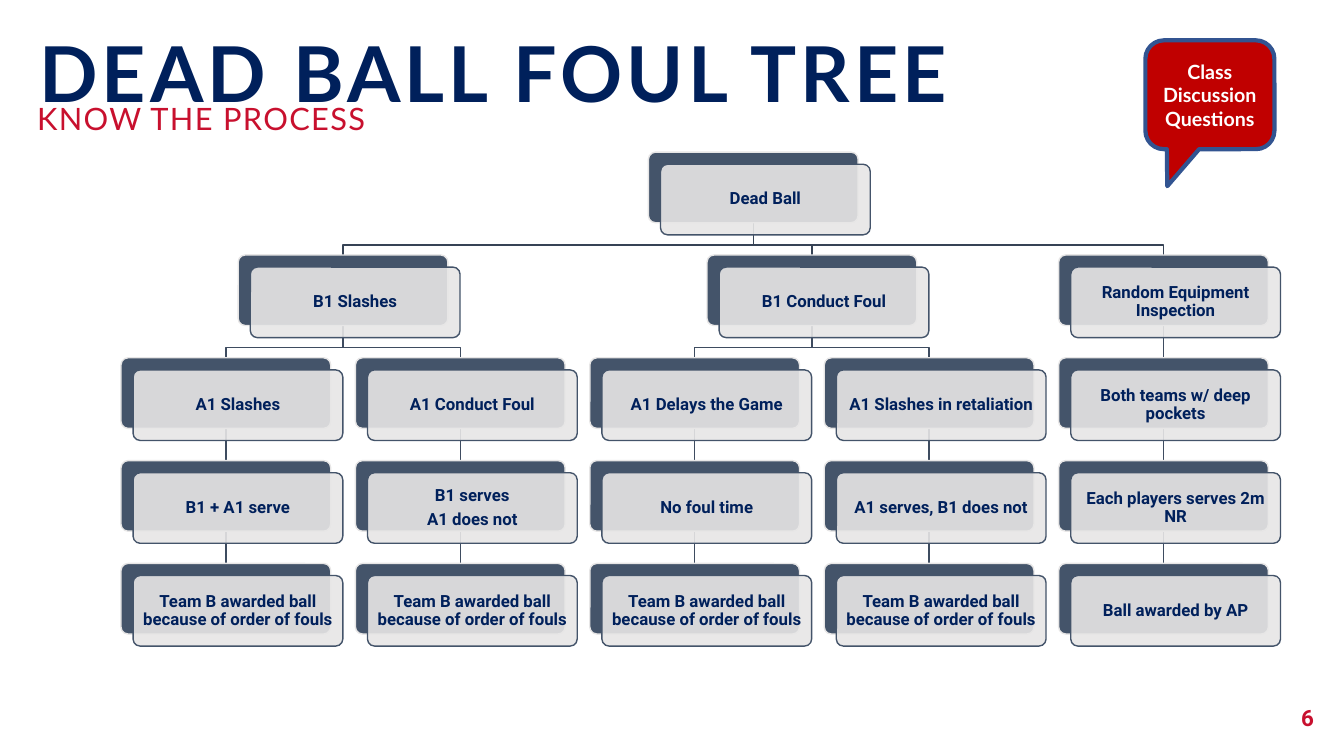
from itertools import count
from lxml.etree import SubElement
from pptx import Presentation
from pptx.dml.color import RGBColor
from pptx.enum.shapes import MSO_CONNECTOR, MSO_SHAPE
from pptx.enum.text import MSO_ANCHOR, PP_ALIGN
from pptx.oxml.ns import qn
from pptx.util import Inches, Pt

TITLE = "DEAD BALL FOUL TREE"
SUBTITLE = "KNOW THE PROCESS"
PAGE_NUMBER = "6"
DISCUSSION = "Class Discussion Questions"
AWARD = {"Team B awarded ball because of order of fouls": {}}
FOUL_TREE = {
    "Dead Ball": {
        "B1 Slashes": {
            "A1 Slashes": {"B1 + A1 serve": AWARD},
            "A1 Conduct Foul": {"B1 serves\nA1 does not": AWARD},
        },
        "B1 Conduct Foul": {
            "A1 Delays the Game": {"No foul time": AWARD},
            "A1 Slashes in retaliation": {"A1 serves, B1 does not": AWARD},
        },
        "Random Equipment Inspection": {
            "Both teams w/ deep pockets": {
                "Each players serves 2m NR": {"Ball awarded by AP": {}},
            },
        },
    },
}

THEME = {
    "navy": "00205B", "red": "C8102E", "white": "FFFFFF",
    "slate": "44546A", "mist": "E7E6E6",
    "root_branch": "364355", "branch": "3E4C60",
    "callout": "C00000", "callout_edge": "325491",
    "heading_font": "Lato", "body_font": "Roboto",
    "title": 55, "subtitle": 22, "page": 16, "discussion": 14, "card": 12,
}
TREE_LEFT, TREE_TOP = 1.2, 1.51
COLUMN_STEP, ROW_STEP = 2.325, 1.02
CARD_W, CARD_H, CARD_OFFSET = 2.08, 0.7, 0.12
ELBOW_DROP = 0.22


def color(name):
    return RGBColor.from_string(THEME[name])


def write(shape, text, font, size, ink, bold=True, align=PP_ALIGN.LEFT,
          tracking=0, line_spacing=None, space_after=None):
    frame = shape.text_frame
    frame.word_wrap = True
    for index, line in enumerate(text.split("\n")):
        paragraph = frame.add_paragraph() if index else frame.paragraphs[0]
        paragraph.alignment = align
        paragraph.line_spacing = line_spacing
        paragraph.space_after = space_after
        run = paragraph.add_run()
        run.text = line
        run.font.name = THEME[font]
        run.font.size = Pt(THEME[size])
        run.font.bold = bold
        run.font.color.rgb = color(ink)
        if tracking:
            run.font._element.set("spc", str(tracking * 100))


def add_label(slide, box, text, *style, **options):
    label = slide.shapes.add_textbox(*map(Inches, box))
    write(label, text, *style, **options)


def add_panel(slide, preset, box, fill, edge, width, adjustments):
    panel = slide.shapes.add_shape(preset, *map(Inches, box))
    panel.shadow.inherit = False
    panel.fill.solid()
    panel.fill.fore_color.rgb = color(fill)
    panel.line.color.rgb = color(edge)
    panel.line.width = Pt(width)
    for index, value in enumerate(adjustments):
        panel.adjustments[index] = value
    return panel


def place(tree, columns, cards, branches, row=0):
    lefts = []
    top = TREE_TOP + row * ROW_STEP
    for label, children in tree.items():
        child_lefts = place(children, columns, cards, branches, row + 1)
        if child_lefts:
            left = (child_lefts[0] + child_lefts[-1]) / 2
        else:
            left = TREE_LEFT + next(columns) * COLUMN_STEP
        cards.append((label, left, top))
        branches.extend((left, child, top, row) for child in child_lefts)
        lefts.append(left)
    return lefts


def add_branch(slide, parent_left, child_left, parent_top, row):
    start_x, end_x = (Inches(left + CARD_W / 2) for left in (parent_left, child_left))
    start_y = Inches(parent_top + CARD_H)
    elbow_y = Inches(parent_top + CARD_H + ELBOW_DROP)
    end_y = Inches(parent_top + ROW_STEP)
    if start_x == end_x:
        branch = slide.shapes.add_connector(
            MSO_CONNECTOR.STRAIGHT, start_x, start_y, end_x, end_y)
        SubElement(branch._element.spPr, qn("a:effectLst"))
    else:
        builder = slide.shapes.build_freeform(start_x, start_y)
        builder.add_line_segments(
            [(start_x, elbow_y), (end_x, elbow_y), (end_x, end_y)], close=False)
        branch = builder.convert_to_shape()
        branch.shadow.inherit = False
        branch.fill.background()
    branch.line.color.rgb = color("branch" if row else "root_branch")
    branch.line.width = Pt(1)


def add_card(slide, label, left, top):
    add_panel(slide, MSO_SHAPE.ROUNDED_RECTANGLE, (left, top, CARD_W, CARD_H),
              "slate", "mist", 1, [0.1])
    front = add_panel(
        slide, MSO_SHAPE.ROUNDED_RECTANGLE,
        (left + CARD_OFFSET, top + CARD_OFFSET, CARD_W, CARD_H),
        "mist", "slate", 1, [0.1])
    tint = front.fill._xPr.find(qn("a:solidFill"))[0]
    SubElement(tint, qn("a:alpha"), val="90000")
    frame = front.text_frame
    frame.vertical_anchor = MSO_ANCHOR.MIDDLE
    frame.margin_left = frame.margin_right = Inches(0.07)
    frame.margin_top = frame.margin_bottom = Inches(0.07)
    write(front, label, "body_font", "card", "navy", align=PP_ALIGN.CENTER,
          line_spacing=0.9, space_after=Pt(4.2))


def main():
    deck = Presentation()
    deck.slide_width, deck.slide_height = Inches(13.33), Inches(7.5)
    slide = deck.slides.add_slide(deck.slide_layouts[6])

    cards, branches = [], []
    place(FOUL_TREE, count(), cards, branches)
    for branch in branches:
        add_branch(slide, *branch)
    for card in cards:
        add_card(slide, *card)

    add_label(slide, (0.29, 0.31, 11.5, 0.97), TITLE,
              "heading_font", "title", "navy", tracking=3, line_spacing=0.9)
    add_label(slide, (0.27, 0.94, 11.93, 0.47), SUBTITLE,
              "heading_font", "subtitle", "red", bold=False, tracking=1)
    add_label(slide, (10.13, 6.94, 3, 0.4), PAGE_NUMBER,
              "body_font", "page", "red", align=PP_ALIGN.RIGHT)
    discussion = add_panel(
        slide, MSO_SHAPE.ROUNDED_RECTANGULAR_CALLOUT, (11.36, 0.4, 1.28, 1.08),
        "callout", "callout_edge", 3, [-0.33, 0.84, 0.17])
    discussion.text_frame.vertical_anchor = MSO_ANCHOR.MIDDLE
    write(discussion, DISCUSSION, "heading_font", "discussion", "white",
          align=PP_ALIGN.CENTER)
    deck.save("out.pptx")


if __name__ == "__main__":
    main()
